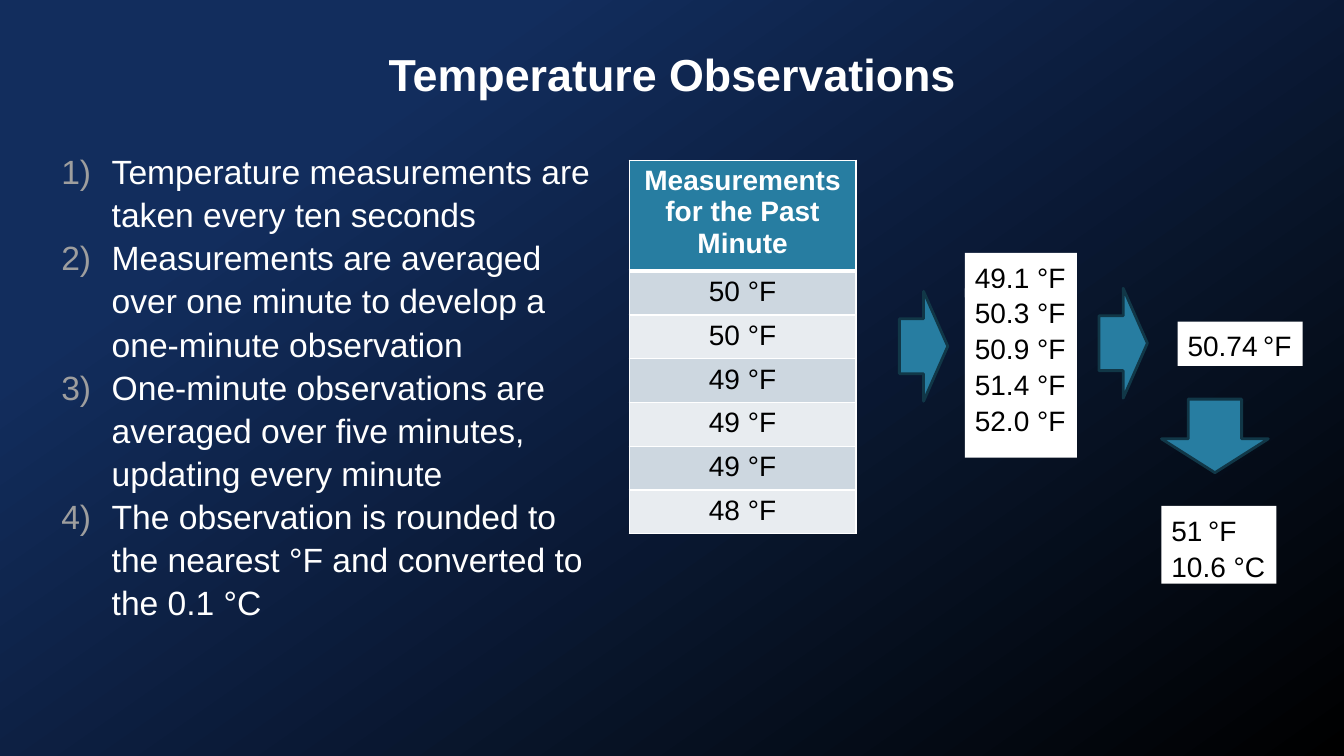
from lxml import etree
from pptx import Presentation
from pptx.dml.color import RGBColor
from pptx.enum.shapes import MSO_SHAPE
from pptx.enum.text import MSO_ANCHOR, PP_ALIGN
from pptx.oxml.ns import qn
from pptx.util import Inches, Pt

WHITE, BLACK, NAVY = "FFFFFF", "000000", "122D5D"
TEAL, TEAL_EDGE, NUMBER_GREY = "277DA1", "113747", "9E9E9E"
BANDS = ("CDD7E0", "E8ECF0")
LINE_SPACING = 1.07

STEPS = (
    "Temperature measurements are taken every ten seconds",
    "Measurements are averaged over one minute to develop a one-minute observation",
    "One-minute observations are averaged over five minutes, updating every minute",
    "The observation is rounded to the nearest °F and converted to the 0.1 °C",
)
MEASUREMENTS = ("50 °F", "50 °F", "49 °F", "49 °F", "49 °F", "48 °F")


def color(hex_text):
    """Turn a hex string into a colour."""
    return RGBColor.from_string(hex_text)


def style_runs(paragraph, size, hex_text, bold=False):
    """Format every run of a paragraph."""
    for run in paragraph.runs:
        run.font.name = "Arial"
        run.font.size = Pt(size)
        run.font.bold = bold
        run.font.color.rgb = color(hex_text)


def paint_background(slide):
    """Fill the slide with a navy gradient that darkens to the lower right."""
    fill = slide.background.fill
    fill.gradient()
    fill.gradient_angle = 125
    for stop, position, shade in zip(fill.gradient_stops, (0, 0.78), (BLACK, NAVY)):
        stop.position = position
        stop.color.rgb = color(shade)


def add_title(slide, left, top, width, height):
    """Place the centred heading."""
    frame = slide.shapes.add_textbox(*map(Inches, (left, top, width, height))).text_frame
    frame.word_wrap = True
    frame.vertical_anchor = MSO_ANCHOR.BOTTOM
    frame.text = "Temperature Observations"
    frame.paragraphs[0].alignment = PP_ALIGN.CENTER
    style_runs(frame.paragraphs[0], 32, WHITE, True)


def add_steps(slide, left, top, width, height):
    """Place the numbered list of observation steps."""
    frame = slide.shapes.add_textbox(*map(Inches, (left, top, width, height))).text_frame
    frame.word_wrap = True
    frame.text = "\n".join(STEPS)
    for step in frame.paragraphs:
        step.line_spacing = LINE_SPACING
        properties = step._p.get_or_add_pPr()
        properties.set("marL", str(Inches(0.5)))
        properties.set("indent", str(Inches(-0.5)))
        number_color = etree.SubElement(properties, qn("a:buClr"))
        etree.SubElement(number_color, qn("a:srgbClr"), val=NUMBER_GREY)
        etree.SubElement(properties, qn("a:buFont"), typeface="Arial")
        etree.SubElement(properties, qn("a:buAutoNum"), type="arabicParenR")
        style_runs(step, 24, WHITE)


def style_cell(cell, text, fill, text_color, bold, top_width, bottom_width):
    """Write a centred table cell with white borders."""
    cell.text = text
    cell.text_frame.paragraphs[0].alignment = PP_ALIGN.CENTER
    style_runs(cell.text_frame.paragraphs[0], 20, text_color, bold)
    properties = cell._tc.get_or_add_tcPr()
    edges = (("a:lnL", 1), ("a:lnR", 1), ("a:lnT", top_width), ("a:lnB", bottom_width))
    for edge, points in edges:
        line = etree.SubElement(properties, qn(edge), w=str(Pt(points)))
        line_fill = etree.SubElement(line, qn("a:solidFill"))
        etree.SubElement(line_fill, qn("a:srgbClr"), val=WHITE)
    cell.fill.solid()
    cell.fill.fore_color.rgb = color(fill)


def add_measurements(slide, left, top, width, header_height, row_height):
    """Place the table of the past minute's measurements."""
    height = header_height + row_height * len(MEASUREMENTS)
    table = slide.shapes.add_table(
        len(MEASUREMENTS) + 1, 1, *map(Inches, (left, top, width, height))
    ).table
    table.rows[0].height = Inches(header_height)
    style_cell(table.cell(0, 0), "Measurements for the Past Minute", TEAL, WHITE, True, 1, 3)
    for index, measurement in enumerate(MEASUREMENTS):
        table.rows[index + 1].height = Inches(row_height)
        top_width = 1 if index else 3
        style_cell(table.cell(index + 1, 0), measurement, BANDS[index % 2],
                   BLACK, False, top_width, 1)


def add_arrow(slide, kind, left, top, width, height):
    """Place a teal block arrow."""
    arrow = slide.shapes.add_shape(kind, *map(Inches, (left, top, width, height)))
    arrow.shadow.inherit = False
    arrow.fill.solid()
    arrow.fill.fore_color.rgb = color(TEAL)
    arrow.line.color.rgb = color(TEAL_EDGE)
    arrow.line.width = Pt(2)
    return arrow


def add_readings(slide, lines, left, top, width, height):
    """Place a white box of readings, each given as a tuple of runs."""
    box = slide.shapes.add_textbox(*map(Inches, (left, top, width, height)))
    box.fill.solid()
    box.fill.fore_color.rgb = color(WHITE)
    frame = box.text_frame
    frame.word_wrap = False
    for index, pieces in enumerate(lines):
        reading = frame.add_paragraph() if index else frame.paragraphs[0]
        reading.line_spacing = LINE_SPACING
        for piece in pieces:
            reading.add_run().text = piece
        style_runs(reading, 20, BLACK)
        for run in reading.runs:
            if run.text == " ":
                run.font.size = Pt(14)


def add_averaging_flow(slide, left, top):
    """Place the flow from one-minute averages to the reported observation."""
    add_arrow(slide, MSO_SHAPE.RIGHT_ARROW, left, top + 0.38, 0.48, 1.09)
    add_readings(slide, [("49.1 °F",)], left + 0.65, top, 1.11, 0.44)
    add_readings(slide, [("50.3 °F",), ("50.9 °F",), ("51.4 °F",), ("52.0 °F",)],
                 left + 0.65, top + 0.35, 1.11, 1.68)
    add_arrow(slide, MSO_SHAPE.RIGHT_ARROW, left + 1.98, top + 0.35, 0.48, 1.09)
    add_readings(slide, [("50.74", " ", "°F")], left + 2.76, top + 0.68, 1.24, 0.44)
    rounding = add_arrow(slide, MSO_SHAPE.DOWN_ARROW, left + 2.6, top + 1.45, 1.06, 0.73)
    rounding.adjustments[1] = 0.46
    add_readings(slide, [("51", " ", "°F"), ("10.6 °C",)],
                 left + 2.6, top + 2.51, 1.14, 0.77)


def main():
    """Build and save the slide."""
    presentation = Presentation()
    presentation.slide_width = Inches(13.33)
    presentation.slide_height = Inches(7.5)
    slide = presentation.slides.add_slide(presentation.slide_layouts[6])
    paint_background(slide)
    add_title(slide, 2.46, 0.33, 8.42, 0.72)
    add_steps(slide, 0.51, 1.42, 5.6, 4.72)
    add_measurements(slide, 6.24, 1.59, 2.25, 1.03, 0.4)
    add_averaging_flow(slide, 8.92, 2.51)
    presentation.save("out.pptx")


if __name__ == "__main__":
    main()
